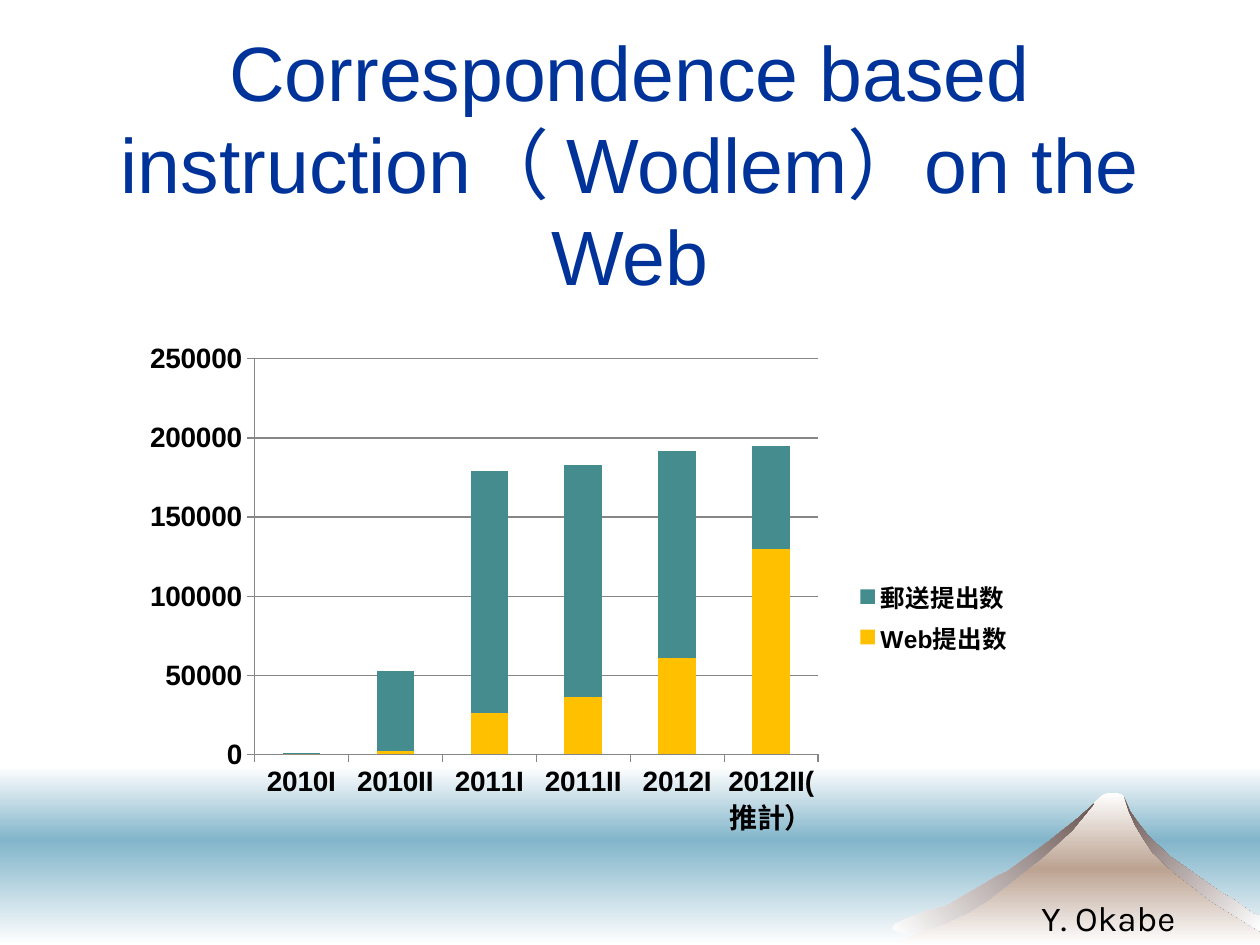
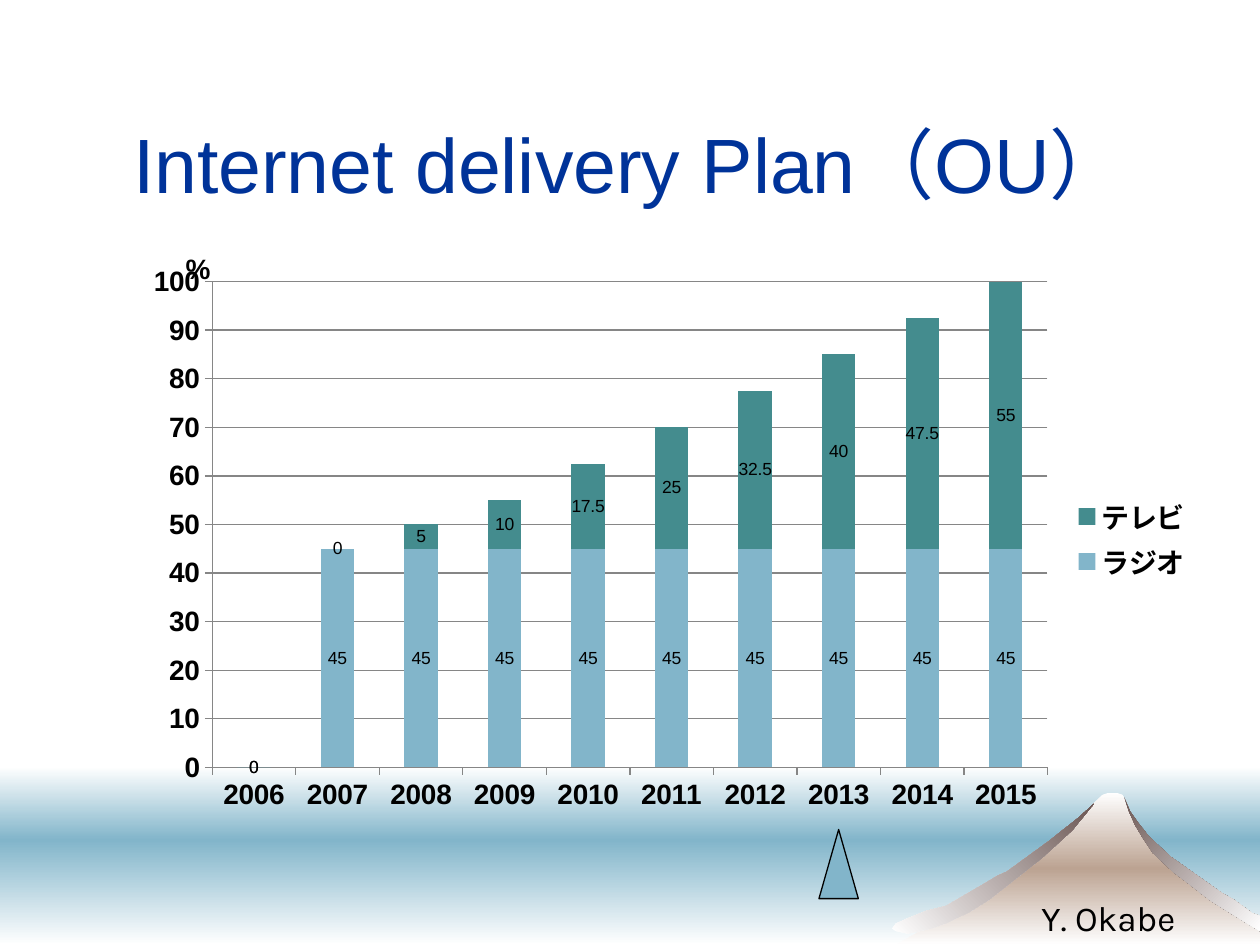
import pptx
import pptx.chart.data
import pptx.dml.color
import pptx.enum.chart
import pptx.enum.shapes
import pptx.enum.text
import pptx.util
from lxml import etree

Pt = pptx.util.Pt
Shape = pptx.enum.shapes.MSO_SHAPE
Fit = pptx.enum.text.MSO_AUTO_SIZE

WIDE, HIGH = 720, 540
FONT = "Arial"
COLORS = {
    "title": "003399", "text": "000000", "snow": "FFFFFF", "sea": "82B5CA",
    "earth": "BCA392", "rock": "6B5653", "teal": "448C8E", "gold": "FFC000",
    "grid": "868686",
}

# Outlines of the mountain, in points
PEAK = [
    (511.9, 540), (568.8, 507.6), (604.8, 479.5), (625.7, 458.6), (630, 454.3),
    (633.6, 452.9), (637.9, 452.9), (641.5, 454.3), (650.2, 473),
    (663.8, 489.6), (697, 512.6), (720, 527.8), (720, 540),
]
EAST = [
    (658.8, 487.4), (670.3, 498.2), (682.6, 507.6), (686.2, 510.5),
    (691.9, 514.8), (712.8, 527.8), (720, 532.1), (720, 523.4), (715.7, 522),
    (704.9, 514.1), (698.4, 510.5), (668.9, 489.6), (656.6, 478.1),
    (650.9, 470.9), (645.8, 463.7), (642.2, 455), (645.1, 463.7),
    (648.7, 471.6), (653, 478.8),
]
WEST = [
    (599, 481), (575.3, 498.2), (570.2, 500.4), (563, 504.7), (540.7, 517.7),
    (529.2, 520.6), (518.4, 524.9), (511.9, 527.8), (509.8, 530.6),
    (511.9, 532.1), (518.4, 533.5), (525.6, 532.1), (532.1, 530.6),
    (540, 527.8), (553.7, 521.3), (565.2, 514.1), (595.4, 490.3),
    (612.7, 474.5), (622.1, 463), (625, 459.4), (616.3, 467.3),
]


def color(name):
    return pptx.dml.color.RGBColor.from_string(COLORS[name])


def style(font, size, bold=False, tint="text", face=FONT):
    font.name, font.size, font.bold = face, Pt(size), bold
    font.color.rgb = color(tint)


def fade(shape, names, angle):
    """Fill with evenly spaced colours; the angle runs clockwise."""
    shape.shadow.inherit = False
    shape.line.fill.background()
    shape.fill.gradient()
    shape.fill.gradient_angle = 360 - angle
    tag = pptx.oxml.ns.qn
    stops = shape.fill._fill._gradFill.find(tag("a:gsLst"))
    for stop in list(stops):
        stops.remove(stop)
    for i, name in enumerate(names):
        place = 100000 * i // (len(names) - 1)
        stop = etree.SubElement(stops, tag("a:gs"), pos=str(place))
        etree.SubElement(stop, tag("a:srgbClr"), val=COLORS[name])


def frame(chart, box):
    """Fix the inner plot area, as fractions of the chart."""
    tag = pptx.oxml.ns.qn
    area = chart._chartSpace.chart.plotArea
    for old in area.findall(tag("c:layout")):
        area.remove(old)
    layout = etree.Element(tag("c:layout"))
    area.insert(0, layout)
    manual = etree.SubElement(layout, tag("c:manualLayout"))
    parts = [("layoutTarget", "inner"), ("xMode", "edge"), ("yMode", "edge")]
    for key, val in parts + list(zip("xywh", box)):
        etree.SubElement(manual, tag("c:" + key), val=str(val))


class Deck:
    def __init__(self):
        self.show = pptx.Presentation()
        self.show.slide_width, self.show.slide_height = Pt(WIDE), Pt(HIGH)
        self.slide = None

    def page(self, title):
        self.slide = self.show.slides.add_slide(self.show.slide_layouts[5])
        self.scene()
        self.title(title)

    def scene(self):
        """Draw the sea, the mountain and the author's name."""
        self.band(438, 42, ["snow", "sea"])
        self.band(480, 60, ["sea", "snow"])
        self.slope(PEAK, ["snow", "earth", "snow"], 90)
        self.slope(EAST, ["rock", "snow"], 45)
        self.slope(WEST, ["snow", "rock"], 315)
        self.label("Y. Okabe", (588, 509, 108, 31), 20, face="Karla")

    def band(self, top, height, names):
        shape = self.slide.shapes.add_shape(
            Shape.RECTANGLE, 0, Pt(top), Pt(WIDE), Pt(height))
        fade(shape, names, 90)

    def slope(self, points, names, angle):
        # The builder keeps whole units, so work in tenths of a point
        first, *rest = [(x * 10, y * 10) for x, y in points]
        path = self.slide.shapes.build_freeform(*first, scale=Pt(0.1))
        path.add_line_segments(rest, close=True)
        fade(path.convert_to_shape(), names, angle)

    def title(self, text):
        shape = self.slide.shapes.title
        shape.left, shape.top = Pt(54), Pt(48)
        shape.width, shape.height = Pt(612), Pt(90)
        body = shape.text_frame
        body.auto_size, body.word_wrap = Fit.NONE, True
        body.vertical_anchor = pptx.enum.text.MSO_ANCHOR.MIDDLE
        para = body.paragraphs[0]
        para.alignment = pptx.enum.text.PP_ALIGN.CENTER
        run = para.add_run()
        run.text = text
        style(run.font, 44, tint="title")

    def label(self, text, box, size, bold=False, wrap=True, face=FONT):
        body = self.slide.shapes.add_textbox(*map(Pt, box)).text_frame
        body.word_wrap, body.auto_size = wrap, Fit.SHAPE_TO_FIT_TEXT
        run = body.paragraphs[0].add_run()
        run.text = text
        style(run.font, size, bold, face=face)

    def mark(self, box):
        shape = self.slide.shapes.add_shape(
            Shape.ISOSCELES_TRIANGLE, *map(Pt, box))
        shape.shadow.inherit = False
        shape.fill.solid()
        shape.fill.fore_color.rgb = color("sea")
        shape.line.color.rgb = color("text")
        shape.line.width = Pt(0.75)

    def stack(self, box, cats, rows, plot, key, top, step, values=False):
        """Add stacked columns; rows hold name, colour and values."""
        data = pptx.chart.data.CategoryChartData()
        data.categories = cats
        for name, _, nums in rows:
            data.add_series(name, nums)
        kind = pptx.enum.chart.XL_CHART_TYPE.COLUMN_STACKED
        chart = self.slide.shapes.add_chart(kind, *map(Pt, box), data).chart
        style(chart.font, 10)
        chart.has_title = False
        chart.has_legend = True
        chart.legend.position = pptx.enum.chart.XL_LEGEND_POSITION.RIGHT
        chart.legend.include_in_layout = False
        style(chart.legend.font, key, True)
        frame(chart, plot)

        bars = chart.plots[0]
        bars.gap_width, bars.overlap = 150, 100
        bars.vary_by_categories = False
        for item, (_, tint, _) in zip(bars.series, rows):
            item.format.fill.solid()
            item.format.fill.fore_color.rgb = color(tint)
            if values:
                item.data_labels.show_value = True
                style(item.data_labels.font, 10)

        scale = chart.value_axis
        scale.minimum_scale, scale.maximum_scale = 0, top
        scale.major_unit = step
        scale.has_major_gridlines = True
        for axis in (chart.category_axis, scale):
            axis.major_tick_mark = pptx.enum.chart.XL_TICK_MARK.OUTSIDE
            style(axis.tick_labels.font, 16, True)
        for part in (chart.category_axis, scale, scale.major_gridlines):
            part.format.line.color.rgb = color("grid")
            part.format.line.width = Pt(0.75)


def main():
    deck = Deck()

    deck.page("Correspondence based instruction（ Wodlem）on the Web")
    deck.stack(
        (76, 185, 510.5, 335),
        ["2010I", "2010II", "2011I", "2011II", "2012I", "2012II(推計）"],
        [("Web提出数", "gold", [0, 2000, 26000, 36000, 61000, 130000]),
         ("郵送提出数", "teal", [1000, 51000, 153000, 147000, 131000, 65000])],
        plot=(0.136, 0.06, 0.631, 0.675), key=14, top=250000, step=50000)

    deck.page("Internet delivery Plan（OU）")
    deck.mark((468, 474, 22.5, 39.5))
    deck.stack(
        (76, 146, 612, 324),
        [str(year) for year in range(2006, 2016)],
        [("ラジオ", "sea", [0] + [45] * 9),
         ("テレビ", "teal", [0, 0, 5, 10, 17.5, 25, 32.5, 40, 47.5, 55])],
        plot=(0.074, 0.046, 0.78, 0.857), key=16, top=100, step=10,
        values=True)
    deck.label("%", (99, 140, 29, 26.5), 16, bold=True, wrap=False)

    deck.show.save("out.pptx")


if __name__ == "__main__":
    main()
